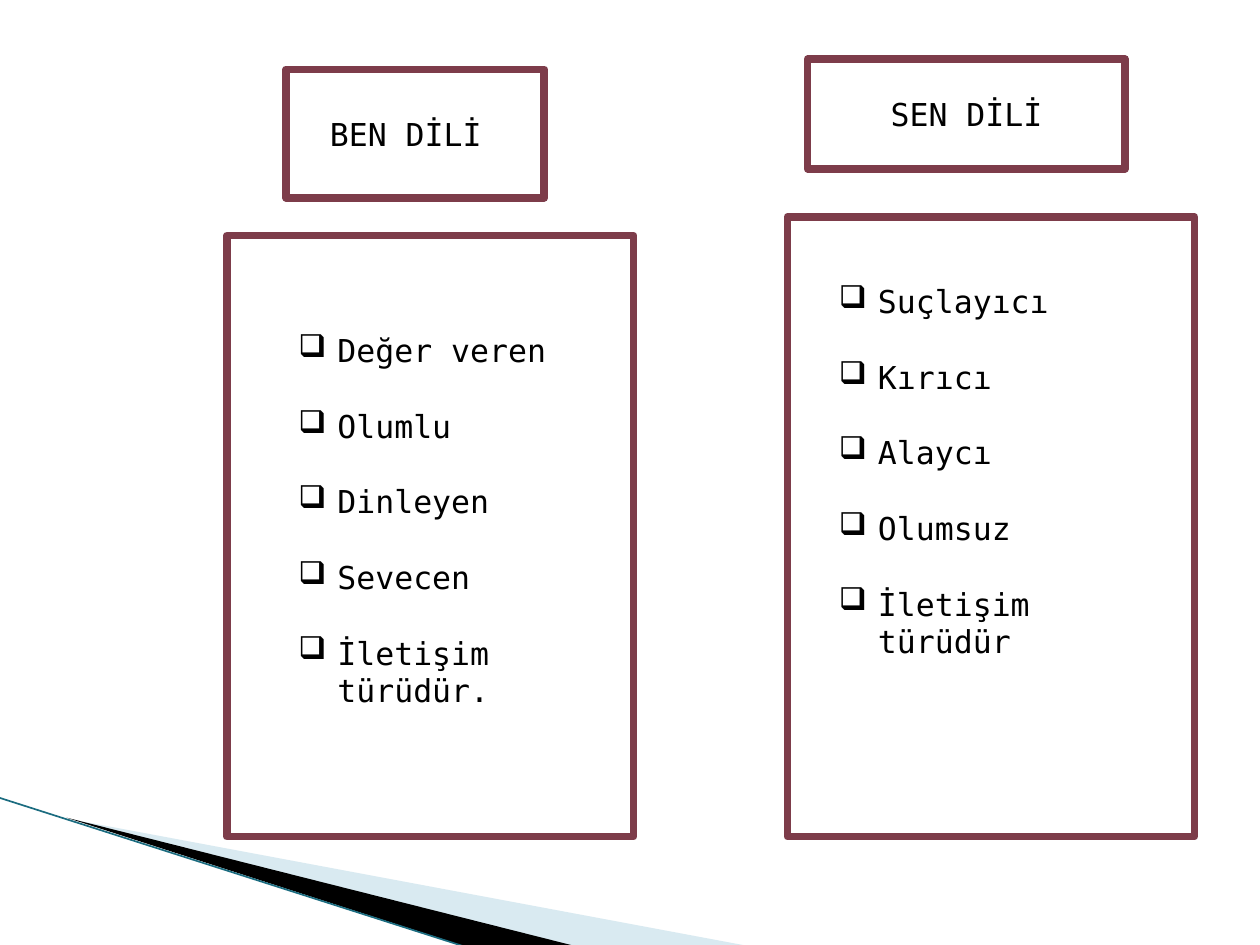
import pptx
import pptx.util
import pptx.dml.color
import pptx.enum.shapes
import pptx.enum.text
import pptx.oxml.ns
from lxml import etree
from pptx.util import Inches, Pt

COLORS = {"paper": "FFFFFF", "frame": "7D3C4A", "text": "000000",
          "pale": "A0CBDC", "dark": "000000", "edge": "1B6C80"}
FONT = "DejaVu Sans Mono"
INDENT = Inches(0.31)


def rgb(name):
    return pptx.dml.color.RGBColor.from_string(COLORS[name])


def add_xml(parent, tag, **attributes):
    return etree.SubElement(parent, pptx.oxml.ns.qn(tag), **attributes)


def set_font(paragraph):
    paragraph.font.name = FONT
    paragraph.font.size = Pt(18)
    paragraph.font.color.rgb = rgb("text")


def add_wedge(slide, points, color, opacity=None):
    corners = [(Inches(x), Inches(y)) for x, y in points]
    builder = slide.shapes.build_freeform(*corners[0], scale=1.0)
    builder.add_line_segments(corners[1:], close=True)
    wedge = builder.convert_to_shape()
    wedge.shadow.inherit = False
    wedge.fill.solid()
    wedge.fill.fore_color.rgb = rgb(color)
    wedge.line.fill.background()
    if opacity:
        tint = wedge._element.spPr.find(".//" + pptx.oxml.ns.qn("a:srgbClr"))
        add_xml(tint, "a:alpha", val=str(opacity * 1000))


def add_corner_decoration(slide):
    add_wedge(slide, [(0.55, 6.5), (5.95, 7.51), (4.56, 7.51)], "pale", 40)
    add_wedge(slide, [(0.53, 6.49), (4.57, 7.51), (3.72, 7.52)], "dark")
    edge = slide.shapes.add_connector(
        pptx.enum.shapes.MSO_CONNECTOR.STRAIGHT,
        Inches(-0.01), Inches(6.33), Inches(3.71), Inches(7.52))
    edge.line.color.rgb = rgb("edge")
    edge.line.width = Pt(0.95)
    add_xml(edge._element.spPr, "a:effectLst")


def add_frame(slide, box):
    frame = slide.shapes.add_shape(
        pptx.enum.shapes.MSO_SHAPE.RECTANGLE, *map(Inches, box))
    frame.fill.solid()
    frame.fill.fore_color.rgb = rgb("paper")
    frame.line.color.rgb = rgb("frame")
    frame.line.width = Pt(4.33)
    add_xml(frame.line._ln, "a:round")
    frame.shadow.inherit = False
    return frame


def add_heading(slide, box, title):
    text = add_frame(slide, box).text_frame
    text.vertical_anchor = pptx.enum.text.MSO_ANCHOR.MIDDLE
    heading = text.paragraphs[0]
    heading.text = title
    heading.alignment = pptx.enum.text.PP_ALIGN.CENTER
    set_font(heading)


def add_traits(slide, box, traits):
    text = slide.shapes.add_textbox(*map(Inches, box)).text_frame
    text.word_wrap = True
    text.auto_size = pptx.enum.text.MSO_AUTO_SIZE.SHAPE_TO_FIT_TEXT
    for i, trait in enumerate(traits):
        item = text.add_paragraph() if i else text.paragraphs[0]
        item.text = trait
        if i:
            item.space_before = Pt(21.6)  # one empty line
        properties = item._p.get_or_add_pPr()
        properties.set("marL", str(INDENT))
        properties.set("indent", str(-INDENT))
        add_xml(properties, "a:buChar", char="❑")
        set_font(item)


def add_language_column(slide, panel, heading, title, listing, traits):
    add_frame(slide, panel)
    add_heading(slide, heading, title)
    add_traits(slide, listing, traits)


def main():
    deck = pptx.Presentation()
    deck.slide_width, deck.slide_height = Inches(10), Inches(7.5)
    slide = deck.slides.add_slide(deck.slide_layouts[6])
    add_corner_decoration(slide)

    # "I" language
    add_language_column(
        slide, (1.8, 1.87, 3.23, 4.77), (2.27, 0.55, 2.05, 1.02), "BEN DİLİ ",
        (2.27, 2.58, 2.44, 3.43),
        ["Değer veren", "Olumlu", "Dinleyen", "Sevecen", "İletişim türüdür."])

    # "You" language
    add_language_column(
        slide, (6.25, 1.72, 3.23, 4.92), (6.41, 0.47, 2.52, 0.87), "SEN DİLİ",
        (6.56, 2.19, 2.68, 2.83),
        ["Suçlayıcı", "Kırıcı", "Alaycı", "Olumsuz", "İletişim türüdür"])

    deck.save("out.pptx")


if __name__ == "__main__":
    main()
